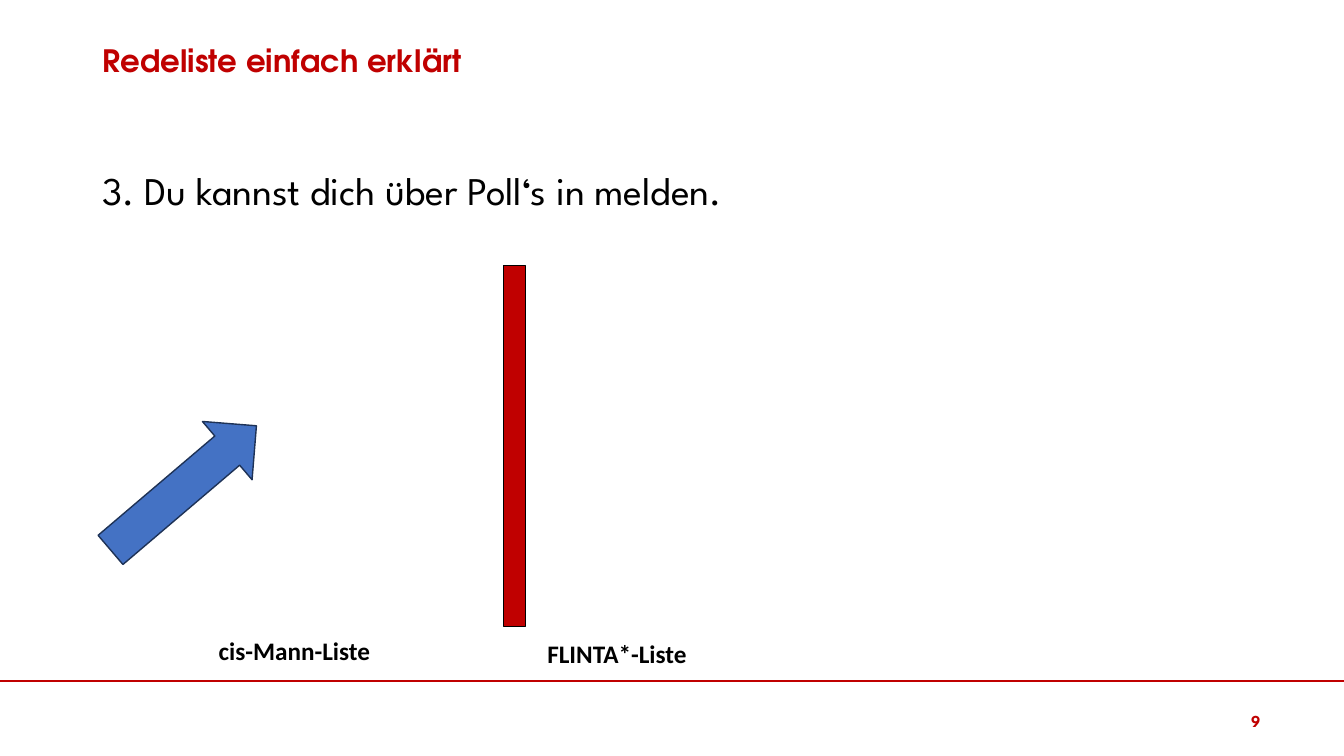
from pptx import Presentation
from pptx.dml.color import RGBColor
from pptx.enum.shapes import MSO_CONNECTOR, MSO_SHAPE
from pptx.enum.text import MSO_ANCHOR, MSO_AUTO_SIZE, PP_ALIGN
from pptx.oxml.ns import qn
from pptx.util import Inches, Pt
from lxml import etree

RED = RGBColor(0xC0, 0x00, 0x00)
BLACK = RGBColor(0x00, 0x00, 0x00)
BLUE = RGBColor(0x44, 0x72, 0xC4)
NAVY = RGBColor(0x1E, 0x32, 0x56)
LEFT, RIGHT = PP_ALIGN.LEFT, PP_ALIGN.RIGHT
TOP, MIDDLE = MSO_ANCHOR.TOP, MSO_ANCHOR.MIDDLE
NO_FIT, GROW = MSO_AUTO_SIZE.NONE, MSO_AUTO_SIZE.SHAPE_TO_FIT_TEXT
MARGIN, CONTENT_WIDTH, RULE_TOP = 0.92, 11.5, 6.76


def write(box, place, text, font, size, color, bold=False, align=LEFT,
          anchor=TOP, wrap=True):
    """Place a text holder (inches) and set its single formatted paragraph."""
    box.left, box.top, box.width, box.height = [Inches(v) for v in place]
    frame = box.text_frame
    frame.text = text
    frame.word_wrap = wrap
    frame.auto_size = NO_FIT if wrap else GROW
    frame.vertical_anchor = anchor
    paragraph = frame.paragraphs[0]
    paragraph.alignment = align
    paragraph.space_before = Pt(0)
    run_font = paragraph.runs[0].font
    run_font.name, run_font.size, run_font.bold = font, Pt(size), bold
    run_font.color.rgb = color
    return paragraph


def add_filled(kind, place, rotation, fill, outline):
    shape = slide.shapes.add_shape(kind, *[Inches(v) for v in place])
    shape.rotation = rotation
    shape.shadow.inherit = False
    shape.fill.solid()
    shape.fill.fore_color.rgb = fill
    shape.line.color.rgb = outline
    shape.line.width = Pt(1)
    return shape


prs = Presentation()
prs.slide_width, prs.slide_height = Inches(13.33), Inches(7.5)
slide = prs.slides.add_slide(prs.slide_layouts[1])

# Footer rule and page number
footer_rule = slide.shapes.add_connector(
    MSO_CONNECTOR.STRAIGHT, 0, Inches(RULE_TOP), prs.slide_width, Inches(RULE_TOP))
footer_rule.line.color.rgb = RED
footer_rule.line.width = Pt(1.5)
etree.SubElement(footer_rule._element.spPr, qn("a:effectLst"))
page_number = slide.shapes.add_textbox(0, 0, 0, 0)
write(page_number, (12.02, 6.95, 0.58, 0.4), "9", "League Spartan", 12, RED,
      bold=True, align=RIGHT, anchor=MIDDLE)

# Title and step
heading = write(slide.shapes.title, (MARGIN, 0.41, CONTENT_WIDTH, 0.42),
                "Redeliste einfach erklärt", "TeX Gyre Adventor", 22, RED, bold=True)
step = write(slide.placeholders[1], (MARGIN, 1.65, CONTENT_WIDTH, 5.1),
             "3. Du kannst dich über Poll‘s in melden.", "League Spartan", 28, BLACK)
for paragraph in (heading, step):
    paragraph.line_spacing = 0.9
step_format = step._p.get_or_add_pPr()
step_format.set("marL", "0")
step_format.set("indent", "0")
etree.SubElement(step_format, qn("a:buNone"))

# Divider between the two speaker lists
divider = add_filled(MSO_SHAPE.MATH_MINUS, (2.67, 3.96, 4.87, 0.93), 90, RED, BLACK)
divider._element.spPr.xfrm.set("flipV", "1")

for list_name, place in (
    ("FLINTA*-Liste", (5.33, 6.28, 1.65, 0.4)),
    ("cis-Mann-Liste", (2.07, 6.25, 1.71, 0.4)),
):
    list_label = slide.shapes.add_textbox(0, 0, 0, 0)
    write(list_label, place, list_name, "Calibri", 18, BLACK, bold=True, wrap=False)

add_filled(MSO_SHAPE.RIGHT_ARROW, (0.87, 4.46, 1.9, 0.76), 319.6, BLUE, NAVY)

prs.save("out.pptx")
